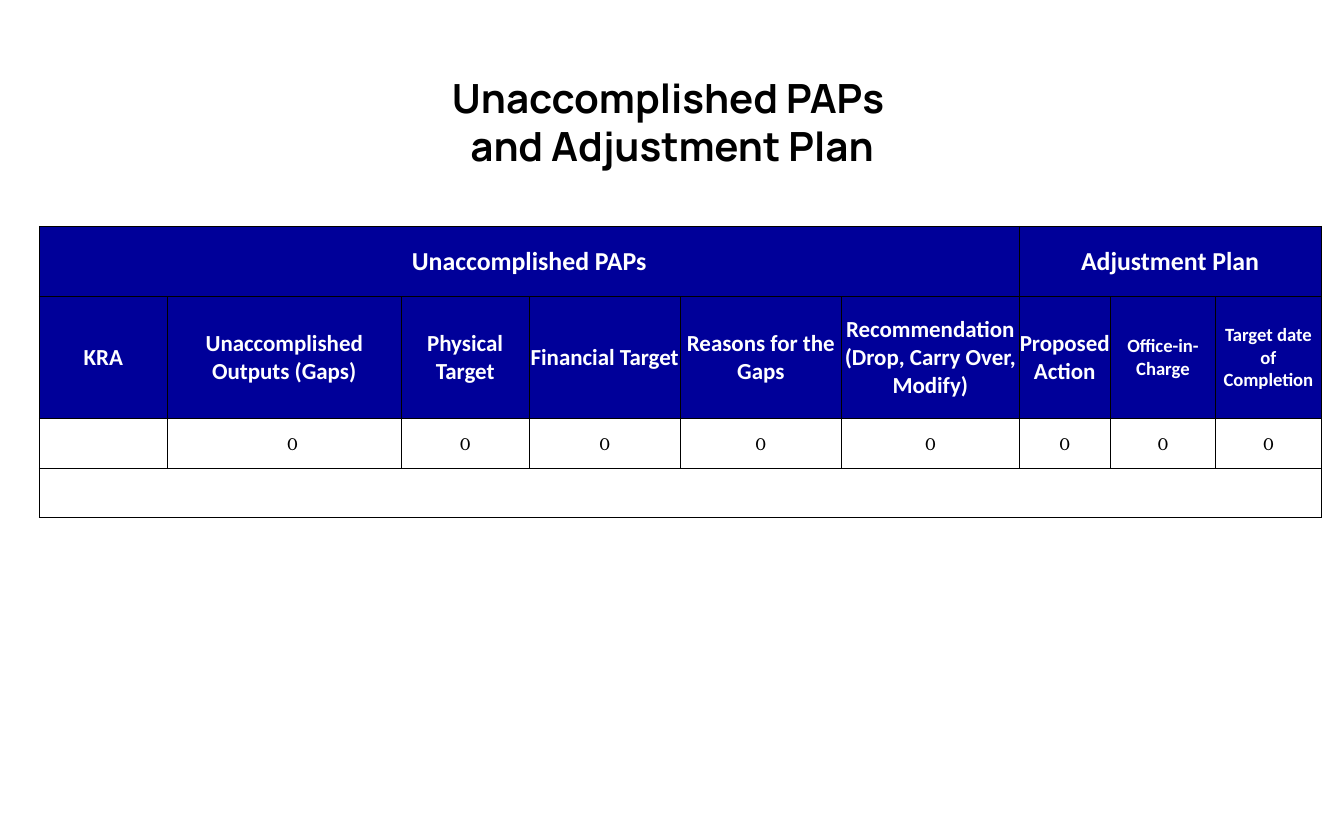
from dataclasses import dataclass
from itertools import product
from lxml.etree import SubElement as Sub
from pptx import Presentation as Deck
from pptx.dml.color import RGBColor as Rgb
from pptx.enum.text import MSO_ANCHOR as Anchor, MSO_AUTO_SIZE as Auto, PP_ALIGN as Align
from pptx.oxml.ns import qn
from pptx.util import Inches, Pt


@dataclass(frozen=True)
class Theme:
    ink: str = "000000"
    navy: str = "000099"
    white: str = "FFFFFF"
    head: str = "Manrope"
    sans: str = "Calibri"
    serif: str = "TeX Gyre Bonum"
    title: int = 28
    group: int = 18
    label: int = 16
    small: int = 13
    value: int = 12
    rule: float = 0.75


class Page:
    unit = Inches(0.02)

    def __init__(self, deck, theme):
        self.theme = theme
        self.slide = deck.slides.add_slide(deck.slide_layouts[5])

    def span(self, *sizes):
        return [int(size * self.unit) for size in sizes]

    def label(self, frame, text, face, size, color, bold):
        frame.text = text
        for para in frame.paragraphs:
            para.alignment = Align.CENTER
            for run in para.runs:
                font = run.font
                font.name, font.size, font.bold = face, Pt(size), bold
                font.color.rgb = Rgb.from_string(color)

    def title(self, text, box):
        look, shape = self.theme, self.slide.shapes.title
        shape.left, shape.top, shape.width, shape.height = self.span(*box)
        frame = shape.text_frame
        frame.margin_left = frame.margin_right = 0
        frame.margin_top = frame.margin_bottom = 0
        frame.vertical_anchor = Anchor.TOP
        frame.word_wrap, frame.auto_size = True, Auto.NONE
        self.label(frame, text, look.head, look.title, look.ink, True)

    def edge(self, cell):
        props = cell._tc.get_or_add_tcPr()
        for side in "LRTB":
            line = Sub(props, qn(f"a:ln{side}"), w=str(Pt(self.theme.rule)))
            fill = Sub(line, qn("a:solidFill"))
            Sub(fill, qn("a:srgbClr"), val=self.theme.ink)

    def table(self, left, top, cols, rows):
        box = self.span(left, top, sum(cols), sum(rows))
        grid = self.slide.shapes.add_table(len(rows), len(cols), *box).table
        grid.first_row = grid.horz_banding = False
        for col, width in zip(grid.columns, self.span(*cols)):
            col.width = width
        for row, height in zip(grid.rows, self.span(*rows)):
            row.height = height
        for row, col in product(range(len(rows)), range(len(cols))):
            cell = grid.cell(row, col)
            cell.margin_left = cell.margin_right = 0
            cell.margin_top = cell.margin_bottom = 0
            cell.vertical_anchor = Anchor.MIDDLE
            self.edge(cell)
            cell.fill.background()
        return grid

    def header(self, cell, text, size):
        look = self.theme
        cell.fill.solid()
        cell.fill.fore_color.rgb = Rgb.from_string(look.navy)
        self.label(cell.text_frame, text, look.sans, size, look.white, True)

    def value(self, cell, text):
        look = self.theme
        self.label(cell.text_frame, text, look.serif, look.value, look.ink, False)


def main():
    deck = Deck()
    deck.slide_width, deck.slide_height = Inches(13), Inches(8)
    look = Theme()
    page = Page(deck, look)
    page.title("Unaccomplished PAPs \nand Adjustment Plan", (97.5, 35.5, 455, 47))

    cols = (62, 113, 62, 73, 78, 86, 44, 51, 51)
    grid = page.table(19, 109.5, cols, (34, 59, 24, 24))
    for row, first, last in ((0, 0, 5), (0, 6, 8), (3, 0, 8)):
        grid.cell(row, first).merge(grid.cell(row, last))
    for col, text in ((0, "Unaccomplished PAPs"), (6, "Adjustment Plan")):
        page.header(grid.cell(0, col), text, look.group)

    labels = (
        "KRA", "Unaccomplished Outputs (Gaps)", "Physical Target",
        "Financial Target", "Reasons for the Gaps",
        "Recommendation (Drop, Carry Over, Modify)", "Proposed Action",
        "Office-in-Charge", "Target date of Completion",
    )
    for col, text in enumerate(labels):
        page.header(grid.cell(1, col), text, look.label if col < 7 else look.small)
        if col:
            page.value(grid.cell(2, col), "0")
    grid.cell(2, 1).margin_left = Inches(0.16)

    deck.save("out.pptx")


if __name__ == "__main__":
    main()
